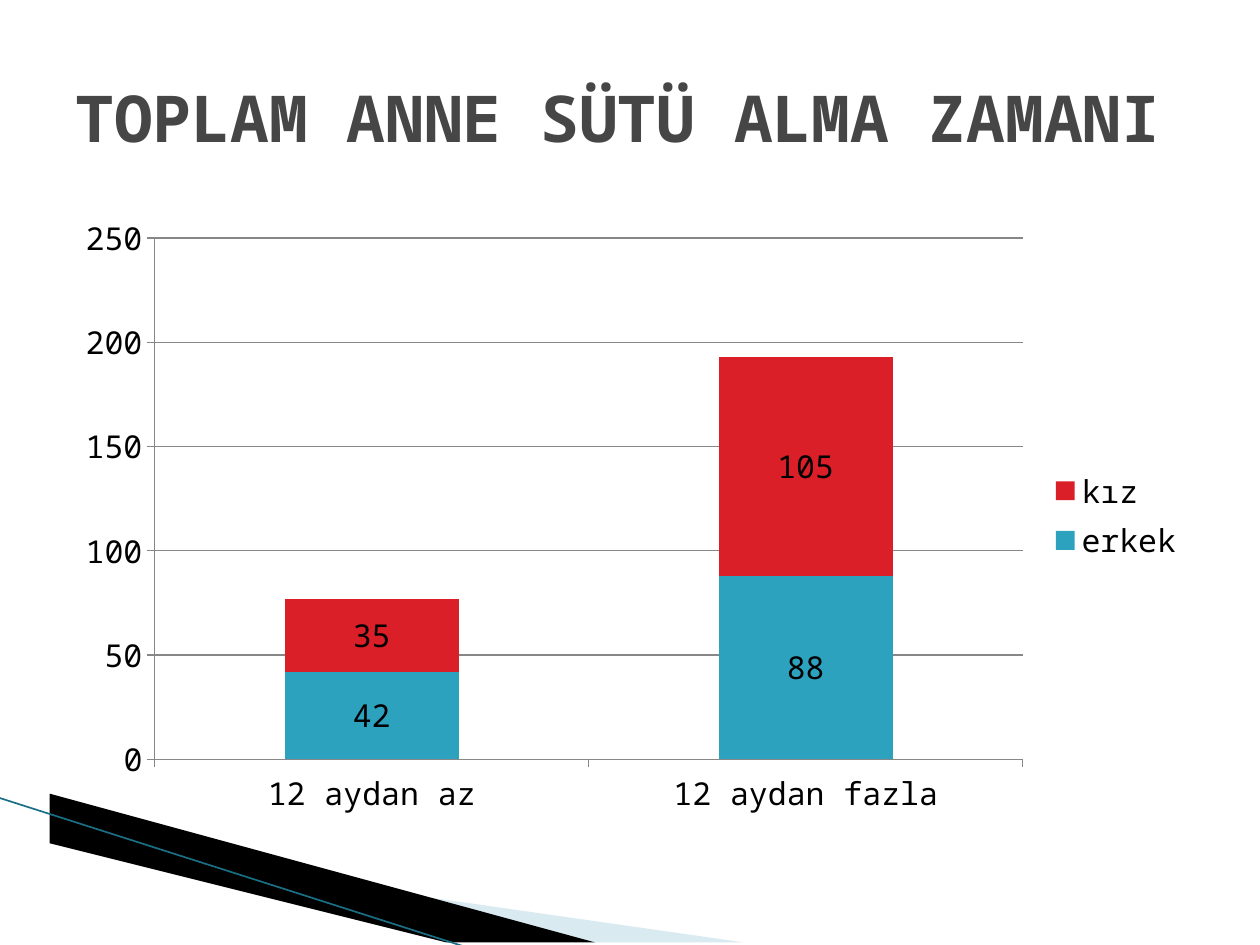
from dataclasses import dataclass

from lxml.etree import SubElement
from pptx import Presentation
from pptx.chart.data import CategoryChartData
from pptx.dml.color import RGBColor
from pptx.enum.chart import XL_CHART_TYPE, XL_LABEL_POSITION, XL_LEGEND_POSITION, XL_TICK_MARK
from pptx.enum.shapes import MSO_CONNECTOR
from pptx.enum.text import MSO_ANCHOR, PP_ALIGN
from pptx.oxml.ns import qn
from pptx.slide import Slide
from pptx.util import Cm, Pt

FONT = "Noto Sans Mono"
LEFT = Cm(1.27)
WIDTH = Cm(22.86)
AXIS_COLOR = "878787"


@dataclass
class Wedge:
    points: list[tuple[float, float]]
    color: str
    opacity: int = 100


@dataclass
class Series:
    name: str
    values: tuple[int, ...]
    color: str


WEDGES = [
    Wedge([(1.4, 16.54), (15.11, 19.08), (11.58, 19.08), (1.4, 16.51)], "A0CBDC", 40),
    Wedge([(1.35, 16.48), (11.61, 19.08), (9.45, 19.1), (1.37, 16.51)], "000000"),
]
CATEGORIES = ["12 aydan az", "12 aydan fazla"]
SERIES = [
    Series("erkek", (42, 88), "2DA2BF"),
    Series("kız", (35, 105), "DA1F28"),
]


def rgb(color: str) -> RGBColor:
    return RGBColor.from_string(color)


def set_font(font, size: float, color: str, bold: bool = False) -> None:
    font.name = FONT
    font.size = Pt(size)
    font.bold = bold
    font.color.rgb = rgb(color)


def draw_wedge(slide: Slide, wedge: Wedge) -> None:
    start, *others = wedge.points
    builder = slide.shapes.build_freeform(*start, scale=Cm(1))
    builder.add_line_segments(others, close=True)
    shape = builder.convert_to_shape()
    shape.shadow.inherit = False
    shape.line.fill.background()
    shape.fill.solid()
    shape.fill.fore_color.rgb = rgb(wedge.color)
    if wedge.opacity < 100:
        color_element = next(shape.element.spPr.iter(qn("a:srgbClr")))
        SubElement(color_element, qn("a:alpha"), val=str(wedge.opacity * 1000))


def draw_edge(slide: Slide) -> None:
    connector = slide.shapes.add_connector(
        MSO_CONNECTOR.STRAIGHT, Cm(-0.03), Cm(16.08), Cm(9.42), Cm(19.1)
    )
    connector.line.color.rgb = rgb("1A6F85")
    connector.line.width = Pt(0.95)
    SubElement(connector.element.spPr, qn("a:effectLst"))


def draw_chart(slide: Slide) -> None:
    data = CategoryChartData()
    data.categories = CATEGORIES
    for series in SERIES:
        data.add_series(series.name, series.values)
    chart = slide.shapes.add_chart(
        XL_CHART_TYPE.COLUMN_STACKED, LEFT, Cm(4.11), WIDTH, Cm(12.57), data
    ).chart
    set_font(chart.font, 18, "000000")
    chart.has_title = False
    chart.has_legend = True
    chart.legend.position = XL_LEGEND_POSITION.RIGHT
    chart.legend.include_in_layout = False

    for axis in (chart.category_axis, chart.value_axis):
        axis.major_tick_mark = XL_TICK_MARK.OUTSIDE
        axis.minor_tick_mark = XL_TICK_MARK.NONE
        axis.format.line.color.rgb = rgb(AXIS_COLOR)
    chart.value_axis.has_major_gridlines = True
    chart.value_axis.major_gridlines.format.line.color.rgb = rgb(AXIS_COLOR)

    plot = chart.plots[0]
    plot.gap_width = 150
    plot.overlap = 100
    plot.vary_by_categories = False
    for drawn, series in zip(plot.series, SERIES):
        drawn.format.fill.solid()
        drawn.format.fill.fore_color.rgb = rgb(series.color)
        labels = drawn.data_labels
        labels.show_value = True
        labels.position = XL_LABEL_POSITION.CENTER
        set_font(labels.font, 18, "000000")


def draw_title(slide: Slide) -> None:
    frame = slide.shapes.add_textbox(LEFT, Cm(0.76), WIDTH, Cm(3.18)).text_frame
    frame.word_wrap = True
    frame.vertical_anchor = MSO_ANCHOR.MIDDLE
    paragraph = frame.paragraphs[0]
    paragraph.text = "TOPLAM ANNE SÜTÜ ALMA ZAMANI"
    paragraph.alignment = PP_ALIGN.LEFT
    set_font(paragraph.font, 36.9, "464646", bold=True)


def main() -> None:
    presentation = Presentation()
    presentation.slide_width = Cm(25.4)
    presentation.slide_height = Cm(19.05)
    slide = presentation.slides.add_slide(presentation.slide_layouts[6])
    for wedge in WEDGES:
        draw_wedge(slide, wedge)
    draw_edge(slide)
    draw_chart(slide)
    draw_title(slide)
    presentation.save("out.pptx")


if __name__ == "__main__":
    main()
